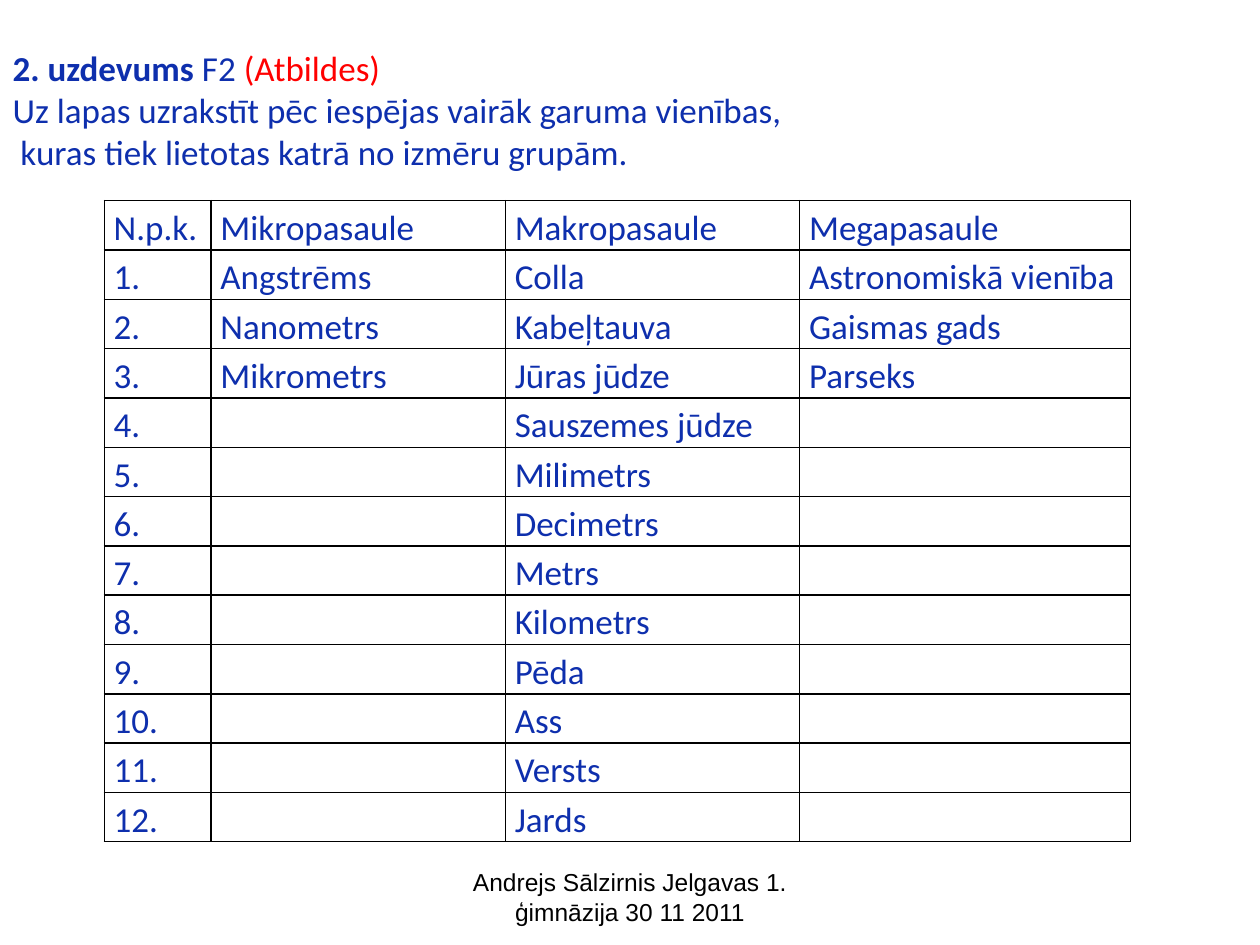
from lxml import etree
from pptx import Presentation
from pptx.dml.color import RGBColor
from pptx.enum import text
from pptx.oxml.ns import qn
from pptx.util import Pt

COLORS = {"blue": "0E2FAD", "red": "FF0000", "black": "000000"}

HEADING = [
    [("2. uzdevums", "blue", True), (" F2 ", "blue", False), ("(Atbildes)", "red", False)],
    [("Uz lapas uzrakstīt pēc iespējas vairāk garuma vienības,", "blue", False)],
    [(" kuras tiek lietotas katrā no izmēru grupām.", "blue", False)],
]
UNITS = {
    "Mikropasaule": ["Angstrēms", "Nanometrs", "Mikrometrs"],
    "Makropasaule": ["Colla", "Kabeļtauva", "Jūras jūdze", "Sauszemes jūdze",
                     "Milimetrs", "Decimetrs", "Metrs", "Kilometrs", "Pēda",
                     "Ass", "Versts", "Jards"],
    "Megapasaule": ["Astronomiskā vienība", "Gaismas gads", "Parseks"],
}
COLUMN_WIDTHS = [61, 168.2, 168.2, 189.2]
ROW_HEIGHT = 28.2


def format_run(r, size, color, name="Calibri", bold=False):
    r.font.size = Pt(size)
    r.font.name = name
    r.font.bold = bold
    r.font.color.rgb = RGBColor.from_string(COLORS[color])


def add_heading(s):
    sp = s.shapes.title
    sp.left, sp.top, sp.width, sp.height = Pt(0), Pt(23), Pt(673), Pt(103)
    tf = sp.text_frame
    tf.word_wrap = True
    tf.auto_size = text.MSO_AUTO_SIZE.NONE
    tf.vertical_anchor = text.MSO_ANCHOR.TOP
    for i, runs in enumerate(HEADING):
        p = tf.add_paragraph() if i else tf.paragraphs[0]
        p.alignment = text.PP_ALIGN.LEFT
        for words, color, bold in runs:
            r = p.add_run()
            r.text = words
            format_run(r, 20, color, bold=bold)


def set_borders(cell):
    tc_pr = cell._tc.get_or_add_tcPr()
    for i, side in enumerate(("a:lnL", "a:lnR", "a:lnT", "a:lnB")):
        ln = etree.Element(qn(side), w=str(Pt(1)))
        fill = etree.SubElement(ln, qn("a:solidFill"))
        etree.SubElement(fill, qn("a:srgbClr"), val=COLORS["black"])
        tc_pr.insert(i, ln)


def fill_cell(cell, words):
    cell.margin_left = cell.margin_right = Pt(5.4)
    cell.margin_top = cell.margin_bottom = Pt(0)
    cell.fill.background()
    set_borders(cell)
    p = cell.text_frame.paragraphs[0]
    p.line_spacing = 1.15
    if words:
        p.text = words
        format_run(p.runs[0], 20, "blue")


def add_units_table(s):
    count = max(len(names) for names in UNITS.values())
    columns = [["N.p.k."] + [f"{n}." for n in range(1, count + 1)]]
    columns += [[group] + names for group, names in UNITS.items()]
    table = s.shapes.add_table(count + 1, len(columns), Pt(59.6), Pt(114.7),
                               Pt(sum(COLUMN_WIDTHS)), Pt(ROW_HEIGHT * (count + 1))).table
    table.first_row = table.horz_banding = False
    for row in table.rows:
        row.height = Pt(ROW_HEIGHT)
    for c, (names, width) in enumerate(zip(columns, COLUMN_WIDTHS)):
        table.columns[c].width = Pt(width)
        for r in range(count + 1):
            fill_cell(table.cell(r, c), names[r] if r < len(names) else "")


def add_footer(s):
    tf = s.shapes.add_textbox(Pt(246), Pt(492), Pt(228), Pt(37.5)).text_frame
    tf.word_wrap = True
    p = tf.paragraphs[0]
    p.text = "Andrejs Sālzirnis Jelgavas 1. ģimnāzija 30 11 2011"
    p.alignment = text.PP_ALIGN.CENTER
    format_run(p.runs[0], 14, "black", "Arial")


def main():
    prs = Presentation()
    prs.slide_width, prs.slide_height = Pt(720), Pt(540)
    s = prs.slides.add_slide(prs.slide_layouts[5])
    add_heading(s)
    add_units_table(s)
    add_footer(s)
    prs.save("out.pptx")


if __name__ == "__main__":
    main()
